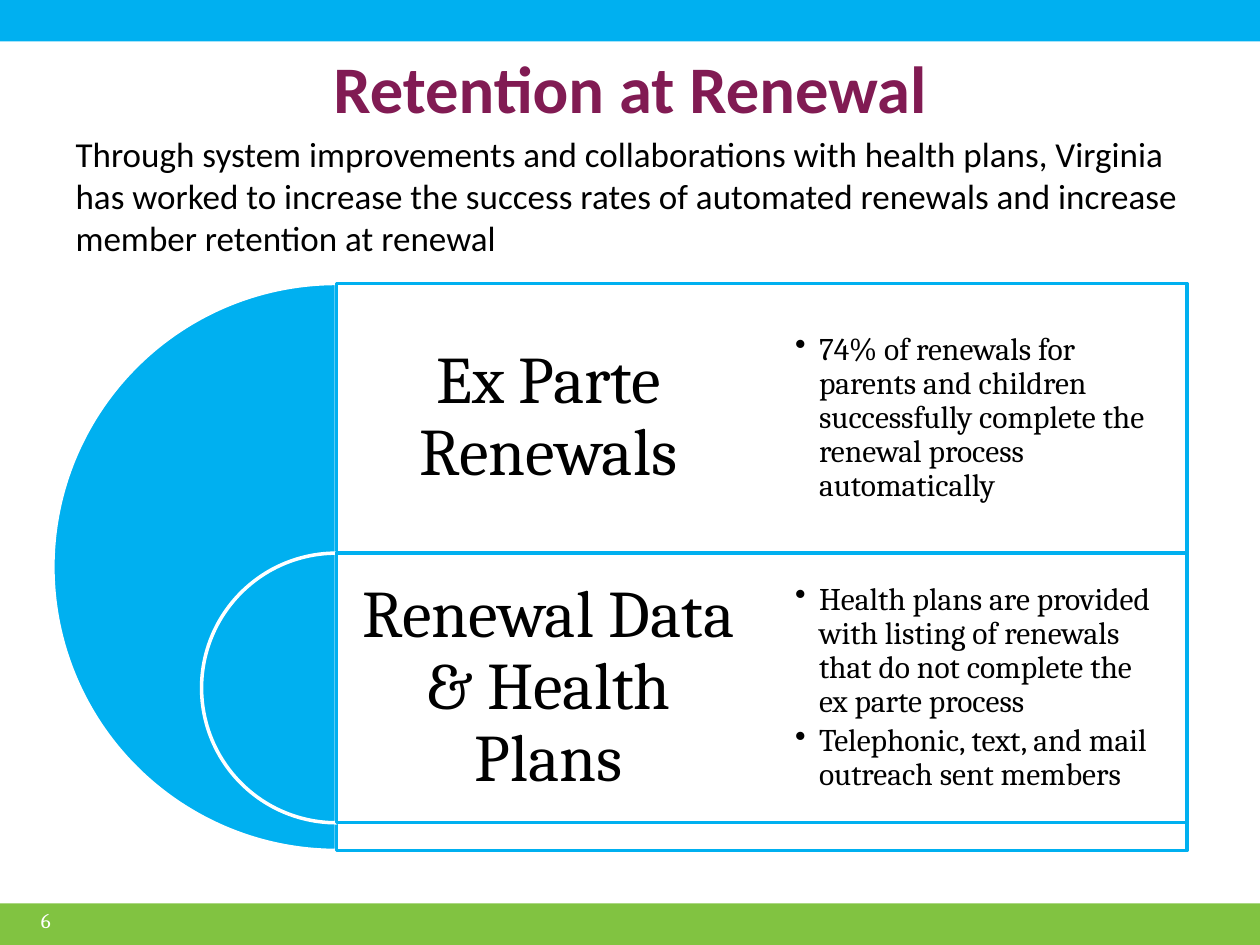
"""Build the Retention at Renewal slide with its nested half-circle diagram."""
from dataclasses import dataclass
from typing import Any

from lxml import etree
from pptx import Presentation
from pptx import util as u
from pptx.dml.color import RGBColor
from pptx.enum import shapes, text
from pptx.oxml import ns


@dataclass(frozen=True)
class Theme:
    blue: str = "00B0F0"
    green: str = "81C341"
    plum: str = "811B53"
    white: str = "FFFFFF"
    black: str = "000000"
    sans: str = "Calibri"
    serif: str = "Cambria"
    heading: int = 38
    intro: int = 20
    bullet: int = 18
    number: int = 12
    line: int = 2


@dataclass(frozen=True)
class Row:
    top: float
    diameter: float
    heading: str
    bullets: tuple[str, ...]


T = Theme()
CENTER, RIGHT_EDGE, TEXT_W, TEXT_H = 2.67, 9.42, 3.37, 2.14
ROWS = (
    Row(2.25, 4.5, "Ex Parte Renewals",
        ("74% of renewals for parents and children successfully complete "
         "the renewal process automatically",)),
    Row(4.39, 2.14, "Renewal Data & Health Plans",
        ("Health plans are provided with listing of renewals that do not "
         "complete the ex parte process",
         "Telephonic, text, and mail outreach sent members")),
)


def apply(obj: Any, **values: Any) -> None:
    """Set every named attribute on an object."""
    for name, value in values.items():
        setattr(obj, name, value)


def place(sp: Any, left: float, top: float, width: float, height: float) -> None:
    """Move and size a shape in inches."""
    apply(sp, left=u.Inches(left), top=u.Inches(top),
          width=u.Inches(width), height=u.Inches(height))


def add_run(p: Any, words: str, size: int, color: str = T.black,
            face: str = T.serif, bold: bool = False) -> None:
    """Add one formatted run to a paragraph."""
    r = p.add_run()
    r.text = words
    apply(r.font, size=u.Pt(size), name=face, bold=bold)
    r.font.color.rgb = RGBColor.from_string(color)


def set_bullet(p: Any, char: str = "", indent: float = 0) -> None:
    """Give a paragraph a hanging bullet, or none."""
    pPr = p._p.get_or_add_pPr()
    pPr.set("marL", str(u.Inches(indent)))
    pPr.set("indent", str(-u.Inches(indent)))
    if char:
        etree.SubElement(pPr, ns.qn("a:buChar")).set("char", char)
    else:
        etree.SubElement(pPr, ns.qn("a:buNone"))


def add_box(s: Any, box: tuple[float, ...], inset: float) -> Any:
    """Add a wrapped, vertically centred text box and return its frame."""
    tf = s.shapes.add_textbox(*map(u.Inches, box)).text_frame
    apply(tf, word_wrap=True, vertical_anchor=text.MSO_ANCHOR.MIDDLE)
    for side in ("left", "right", "top", "bottom"):
        setattr(tf, f"margin_{side}", u.Inches(inset))
    return tf


def add_shape(s: Any, kind: Any, box: tuple[float, ...], fill: str,
              line: str = "") -> Any:
    """Add a filled preset shape with an optional outline."""
    sp = s.shapes.add_shape(kind, *map(u.Inches, box))
    sp.shadow.inherit = False
    sp.fill.solid()
    sp.fill.fore_color.rgb = RGBColor.from_string(fill)
    if line:
        sp.line.color.rgb = RGBColor.from_string(line)
        sp.line.width = u.Pt(T.line)
    else:
        sp.line.fill.background()
    return sp


def add_panel(s: Any, row: Row) -> None:
    """Draw a row's half circle and its translucent panel."""
    d = row.diameter
    pie = add_shape(s, shapes.MSO_SHAPE.PIE, (CENTER - d / 2, row.top, d, d),
                    T.blue, T.white)
    pie.adjustments[0], pie.adjustments[1] = 54, 162
    panel = add_shape(s, shapes.MSO_SHAPE.RECTANGLE,
                      (CENTER, row.top, RIGHT_EDGE - CENTER, d), T.white, T.blue)
    color = panel._element.spPr.find(ns.qn("a:solidFill"))[0]
    etree.SubElement(color, ns.qn("a:alpha")).set("val", "90000")


def add_row_text(s: Any, row: Row) -> None:
    """Write a row's heading and bullets."""
    p = add_box(s, (CENTER, row.top, TEXT_W, TEXT_H), 0.16).paragraphs[0]
    apply(p, alignment=text.PP_ALIGN.CENTER, line_spacing=0.9)
    add_run(p, row.heading, T.heading)
    tf = add_box(s, (CENTER + TEXT_W, row.top, TEXT_W, TEXT_H), 0.27)
    for i, words in enumerate(row.bullets):
        p = tf.add_paragraph() if i else tf.paragraphs[0]
        set_bullet(p, "•", 0.19)
        apply(p, line_spacing=0.9, space_after=u.Pt(3))
        add_run(p, words, T.bullet)


def main() -> None:
    """Assemble and save the slide."""
    prs = Presentation()
    apply(prs, slide_width=u.Inches(10), slide_height=u.Inches(7.5))
    s = prs.slides.add_slide(prs.slide_layouts[1])
    title, body = s.placeholders

    for top, color in ((0, T.blue), (7.17, T.green)):
        add_shape(s, shapes.MSO_SHAPE.RECTANGLE, (0, top, 10, 0.33), color)

    place(title, 0.5, 0.3, 9, 0.78)
    apply(title.text_frame, auto_size=text.MSO_AUTO_SIZE.NONE,
          vertical_anchor=text.MSO_ANCHOR.MIDDLE)
    p = title.text_frame.paragraphs[0]
    p.alignment = text.PP_ALIGN.CENTER
    add_run(p, "Retention at Renewal", T.heading, T.plum, T.sans, True)

    place(body, 0.5, 1, 9, 1.18)
    body.text_frame.auto_size = text.MSO_AUTO_SIZE.NONE
    p = body.text_frame.paragraphs[0]
    set_bullet(p)
    p.space_before = u.Pt(0)
    add_run(p, "Through system improvements and collaborations with health plans, "
            "Virginia has worked to increase the success rates of automated "
            "renewals and increase member retention at renewal",
            T.intro, face=T.sans)

    p = add_box(s, (0.08, 7.1, 0.42, 0.4), 0.1).paragraphs[0]
    p.alignment = text.PP_ALIGN.RIGHT
    add_run(p, "6", T.number, T.white)

    for row in ROWS:
        add_panel(s, row)
        add_row_text(s, row)
    prs.save("out.pptx")


if __name__ == "__main__":
    main()
